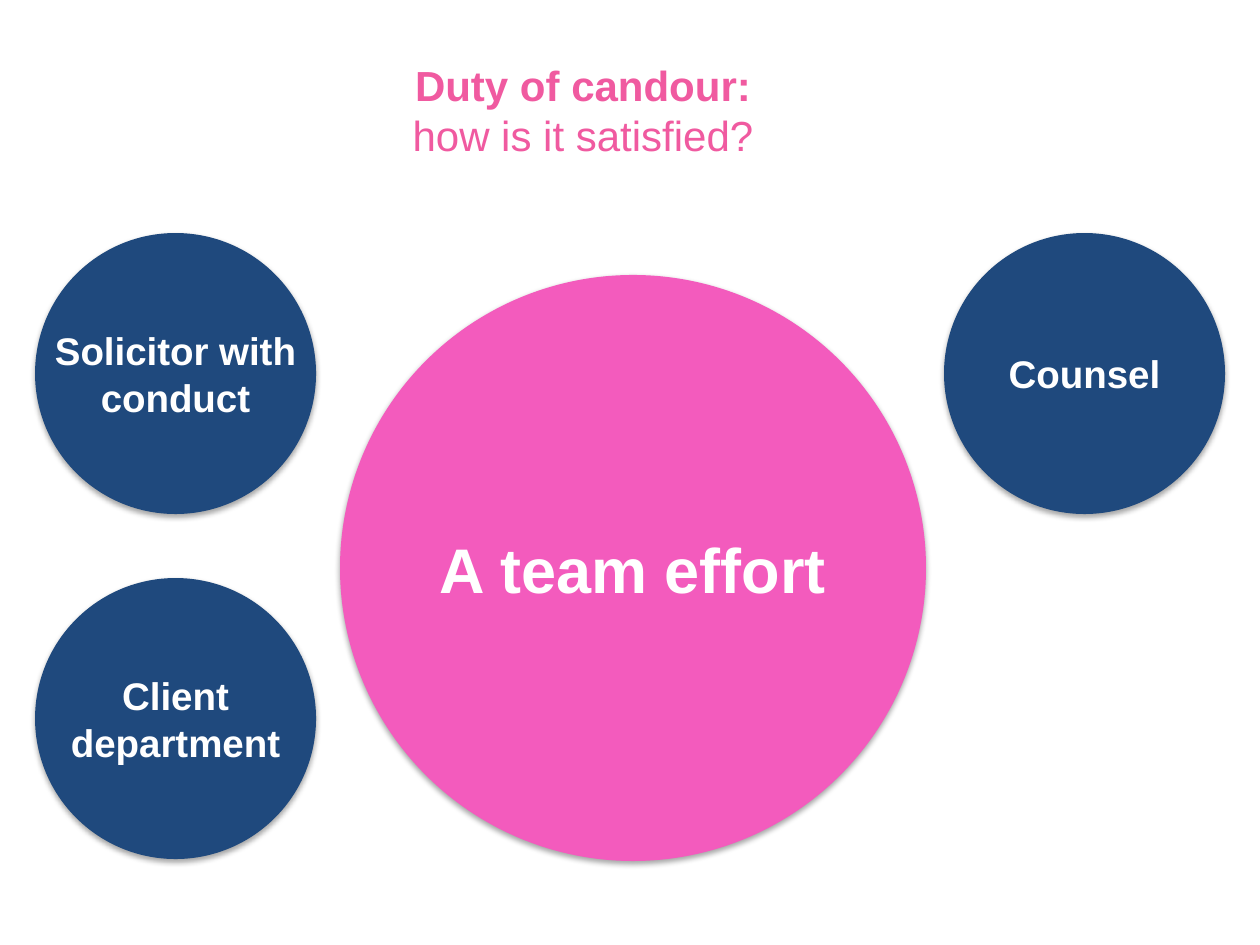
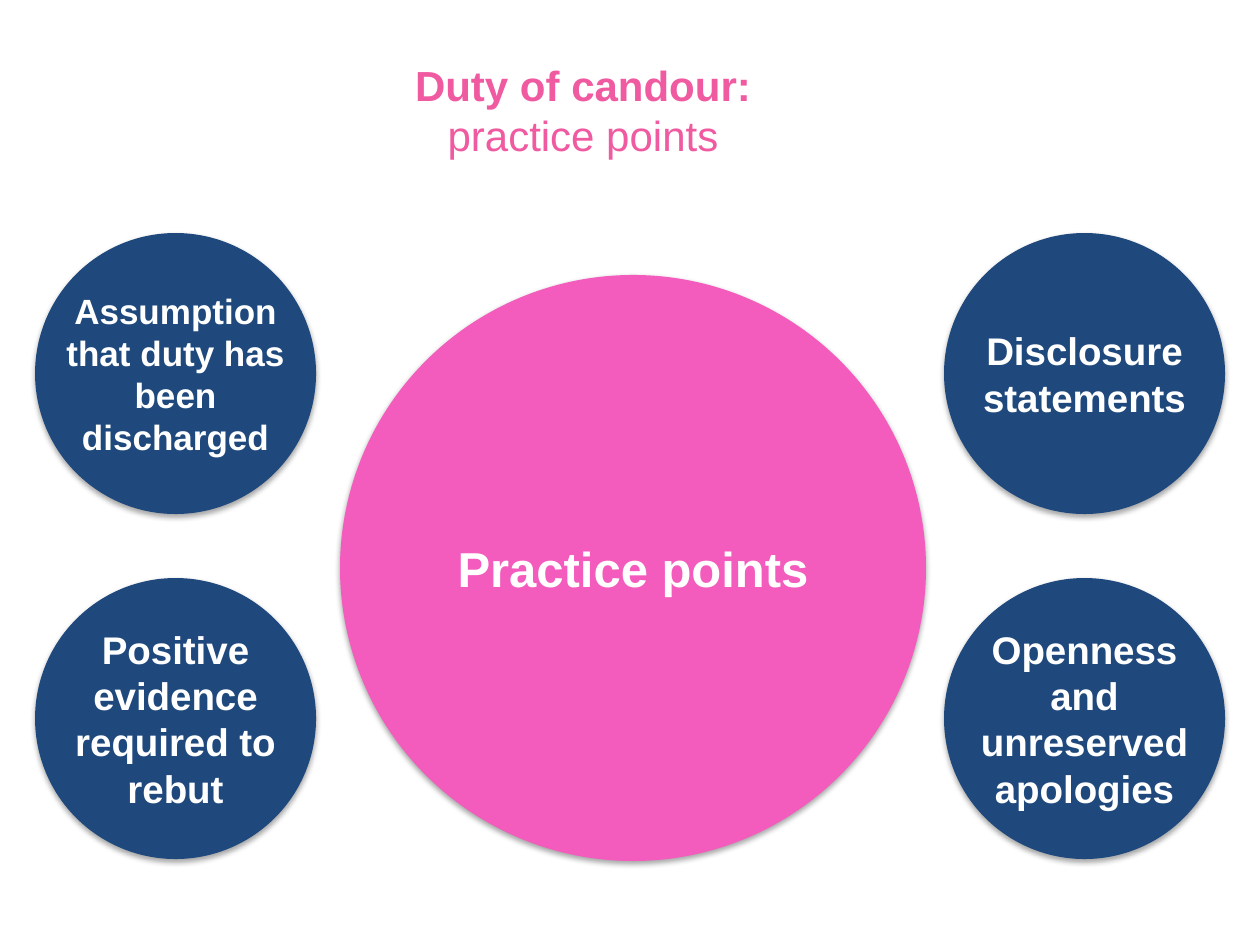
from lxml import etree
from pptx import Presentation
from pptx.dml.color import RGBColor
from pptx.enum.shapes import MSO_SHAPE as Preset
from pptx.enum.text import MSO_ANCHOR as Anchor, PP_ALIGN as Align
from pptx.oxml import parse_xml
from pptx.oxml.ns import nsdecls
from pptx.util import Pt

PX = 914400 / 126
FONT = "Arial"
COLOURS = {"title": "F05AA0", "hub": "F35BBD", "topic": "1F497D", "text": "FFFFFF", "shadow": "000000"}
LEFT, RIGHT, UPPER, LOWER = 35, 944, 233, 578
TOPIC_SIZE = 281
HUB_LEFT, HUB_TOP, HUB_SIZE, HUB_TEXT_WIDTH = 340, 275, 586, 519

SLIDES = [
    ("how is it satisfied?", ("A team effort", 36), [
        (RIGHT, UPPER, "Counsel", 22, 1),
        (LEFT, UPPER, "Solicitor with conduct", 22, 2),
        (LEFT, LOWER, "Client department", 22, 2),
    ]),
    ("practice points", ("Practice points", 28), [
        (RIGHT, UPPER, "Disclosure statements", 22, 2),
        (LEFT, UPPER, "Assumption that duty has been discharged", 20, 4),
        (LEFT, LOWER, "Positive evidence required to rebut", 22, 4),
        (RIGHT, LOWER, "Openness and unreserved apologies", 22, 4),
    ]),
]


def box(left, top, width, height):
    return [round(value * PX) for value in (left, top, width, height)]


def add_circle(slide, left, top, diameter, colour, text, size, lines, text_width):
    group = slide.shapes.add_group_shape()
    circle = group.shapes.add_shape(Preset.OVAL, *box(left, top, diameter, diameter))
    circle.fill.solid()
    circle.fill.fore_color.rgb = RGBColor.from_string(COLOURS[colour])
    circle.line.fill.background()
    circle.shadow.inherit = False
    effects = circle._element.spPr.find("{*}effectLst")
    effects.append(parse_xml(
        f'<a:outerShdw {nsdecls("a")} blurRad="{Pt(3.1)}" dist="{Pt(1.8)}" dir="5400000" rotWithShape="0">'
        f'<a:srgbClr val="{COLOURS["shadow"]}"><a:alpha val="35000"/></a:srgbClr></a:outerShdw>'))

    text_height = round(13 + lines * size * 2.1)
    label = group.shapes.add_textbox(*box(
        left + (diameter - text_width) / 2, top + (diameter - text_height) / 2, text_width, text_height))
    frame = label.text_frame
    frame.word_wrap = True
    frame.vertical_anchor = Anchor.MIDDLE
    paragraph = frame.paragraphs[0]
    paragraph.text = text
    paragraph.alignment = Align.CENTER
    paragraph.font.name = FONT
    paragraph.font.size = Pt(size)
    paragraph.font.bold = True
    paragraph.font.color.rgb = RGBColor.from_string(COLOURS["text"])


presentation = Presentation()
presentation.slide_width, presentation.slide_height = box(0, 0, 1260, 945)[2:]

for subtitle, (hub_text, hub_font_size), topics in SLIDES:
    slide = presentation.slides.add_slide(presentation.slide_layouts[5])
    title = slide.shapes.title
    title.left, title.top, title.width, title.height = box(63, 53, 1040, 105)
    title.text_frame.vertical_anchor = Anchor.TOP
    paragraph = title.text_frame.paragraphs[0]
    paragraph.alignment = Align.CENTER
    paragraph.font.name = FONT
    paragraph.font.size = Pt(24)
    paragraph.font.color.rgb = RGBColor.from_string(COLOURS["title"])
    heading = paragraph.add_run()
    heading.text = "Duty of candour:"
    heading.font.bold = True
    paragraph.add_line_break()
    paragraph.add_run().text = subtitle

    add_circle(slide, HUB_LEFT, HUB_TOP, HUB_SIZE, "hub", hub_text, hub_font_size, 1, HUB_TEXT_WIDTH)
    for left, top, text, size, lines in topics:
        add_circle(slide, left, top, TOPIC_SIZE, "topic", text, size, lines, TOPIC_SIZE)

presentation.save("out.pptx")
